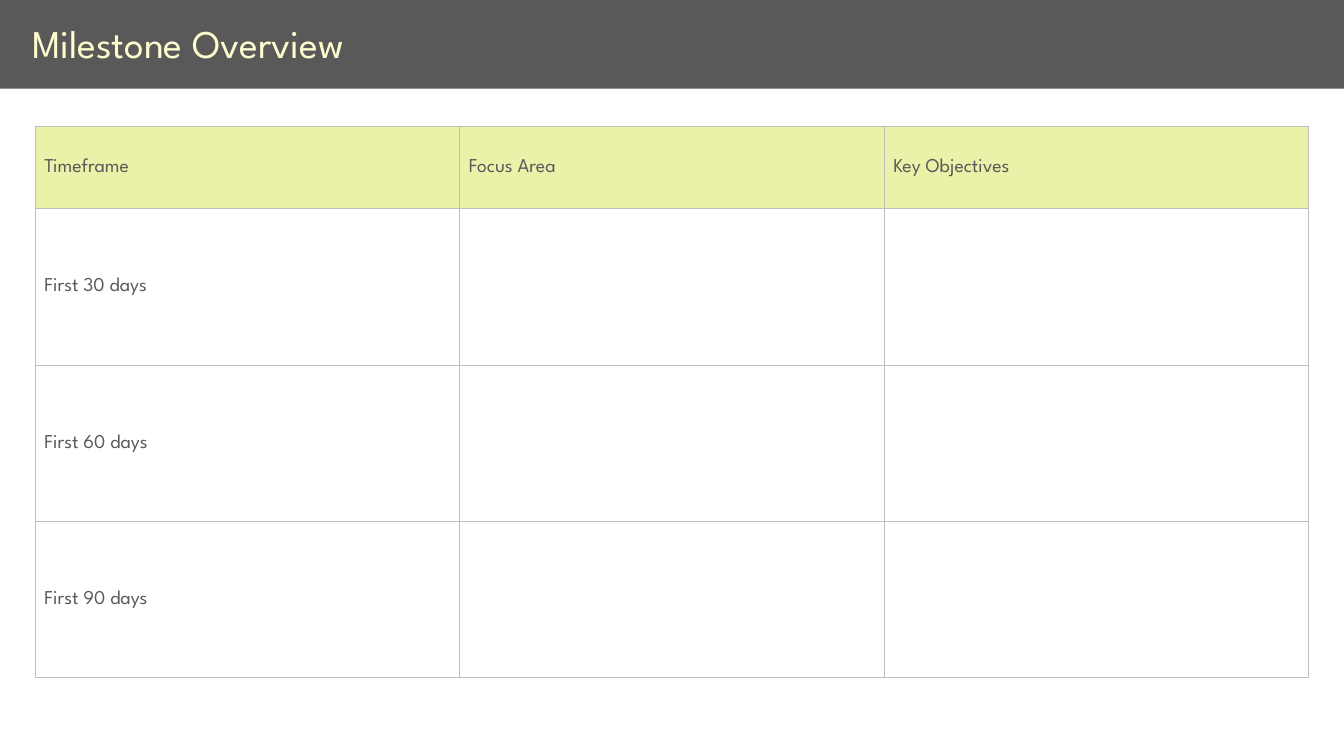
from dataclasses import dataclass

from lxml import etree
from pptx import Presentation
from pptx.dml.color import RGBColor
from pptx.enum import shapes, text
from pptx.oxml import ns
from pptx.util import Inches, Pt

TITLE = "Milestone Overview"
HEADINGS = ["Timeframe", "Focus Area", "Key Objectives"]
TIMEFRAMES = ["First 30 days", "First 60 days", "First 90 days"]


@dataclass(frozen=True)
class Theme:
    font: str = "League Spartan"
    title_size: int = 28
    body_size: int = 14
    dark: str = "595959"
    cream: str = "FEFCCE"
    lime: str = "ECF1A9"
    grid: str = "BFBFBF"
    grid_width: float = 0.5


THEME = Theme()
SLIDE_WIDTH, SLIDE_HEIGHT = 13.33, 7.5
BANNER_HEIGHT = 0.88
TABLE_LEFT, TABLE_TOP = 0.35, 1.25
COLUMN_WIDTH = 4.21
HEADING_HEIGHT, TIMEFRAME_HEIGHT = 0.82, 1.55


def style_text(frame, size, color):
    for paragraph in frame.paragraphs:
        for run in paragraph.runs:
            run.font.name = THEME.font
            run.font.size = Pt(size)
            run.font.color.rgb = RGBColor.from_string(color)


def add_borders(cell):
    properties = cell._tc.get_or_add_tcPr()
    for side in ("a:lnL", "a:lnR", "a:lnT", "a:lnB"):
        line = etree.SubElement(properties, ns.qn(side), w=str(Pt(THEME.grid_width)))
        fill = etree.SubElement(line, ns.qn("a:solidFill"))
        etree.SubElement(fill, ns.qn("a:srgbClr"), val=THEME.grid)


def add_banner(slide):
    banner = slide.shapes.add_shape(
        shapes.MSO_SHAPE.RECTANGLE, 0, 0, Inches(SLIDE_WIDTH), Inches(BANNER_HEIGHT))
    banner.shadow.inherit = False
    banner.fill.solid()
    banner.fill.fore_color.rgb = RGBColor.from_string(THEME.dark)
    banner.line.fill.background()

    title = slide.shapes.add_textbox(Inches(0.22), Inches(0.14), Inches(8.08), Inches(0.57))
    title.text_frame.word_wrap = True
    title.text_frame.text = TITLE
    style_text(title.text_frame, THEME.title_size, THEME.cream)


def add_milestones(slide):
    rows = [HEADINGS] + [[timeframe, "", ""] for timeframe in TIMEFRAMES]
    heights = [HEADING_HEIGHT] + [TIMEFRAME_HEIGHT] * len(TIMEFRAMES)
    milestones = slide.shapes.add_table(
        len(rows), len(HEADINGS), Inches(TABLE_LEFT), Inches(TABLE_TOP),
        Inches(COLUMN_WIDTH * len(HEADINGS)), Inches(sum(heights))).table
    milestones.first_row = milestones.horz_banding = False
    for column in milestones.columns:
        column.width = Inches(COLUMN_WIDTH)
    for row_index, (words, height) in enumerate(zip(rows, heights)):
        milestones.rows[row_index].height = Inches(height)
        for column_index, word in enumerate(words):
            cell = milestones.cell(row_index, column_index)
            cell.margin_left = Inches(0.09)
            cell.margin_right = cell.margin_top = Inches(0.01)
            cell.margin_bottom = 0
            cell.vertical_anchor = text.MSO_ANCHOR.MIDDLE
            add_borders(cell)
            if row_index == 0:
                cell.fill.solid()
                cell.fill.fore_color.rgb = RGBColor.from_string(THEME.lime)
            else:
                cell.fill.background()
            if word:
                cell.text_frame.text = word
                style_text(cell.text_frame, THEME.body_size, THEME.dark)


def main():
    deck = Presentation()
    deck.slide_width, deck.slide_height = Inches(SLIDE_WIDTH), Inches(SLIDE_HEIGHT)
    slide = deck.slides.add_slide(deck.slide_layouts[6])
    add_banner(slide)
    add_milestones(slide)
    deck.save("out.pptx")


if __name__ == "__main__":
    main()
